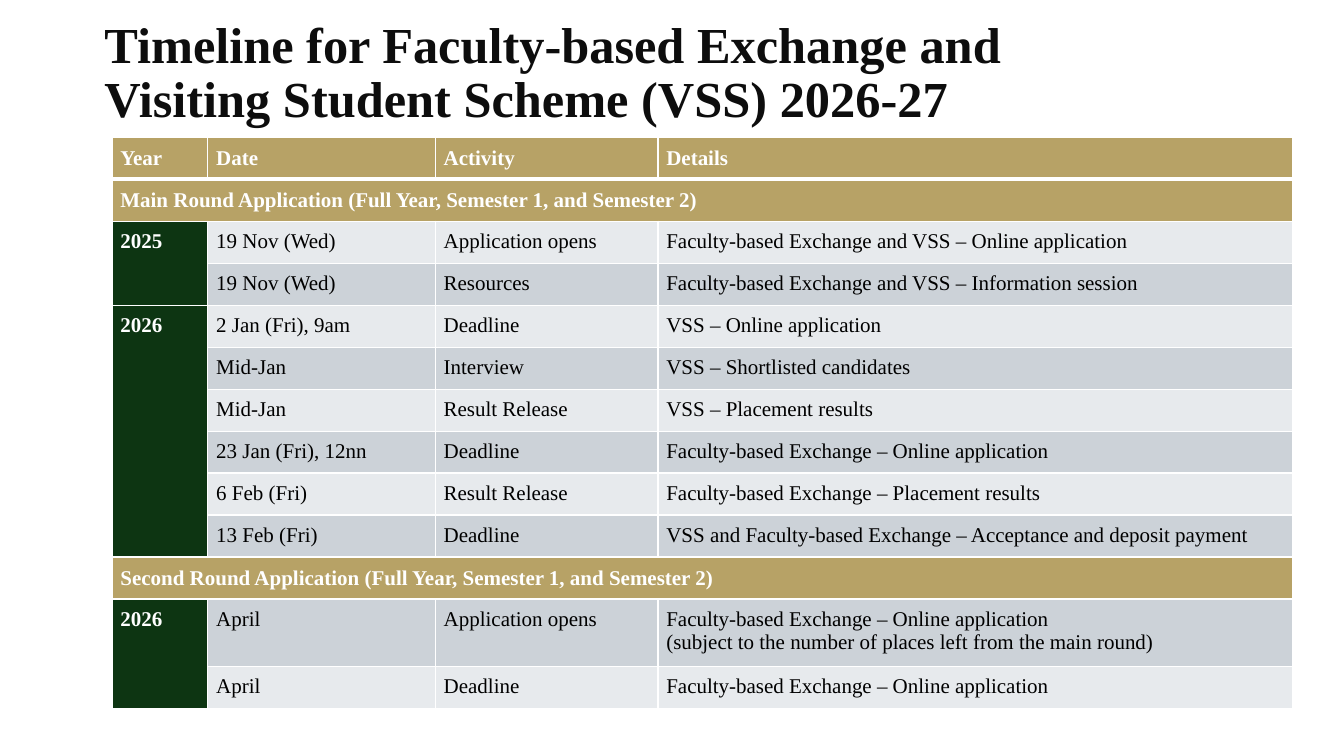
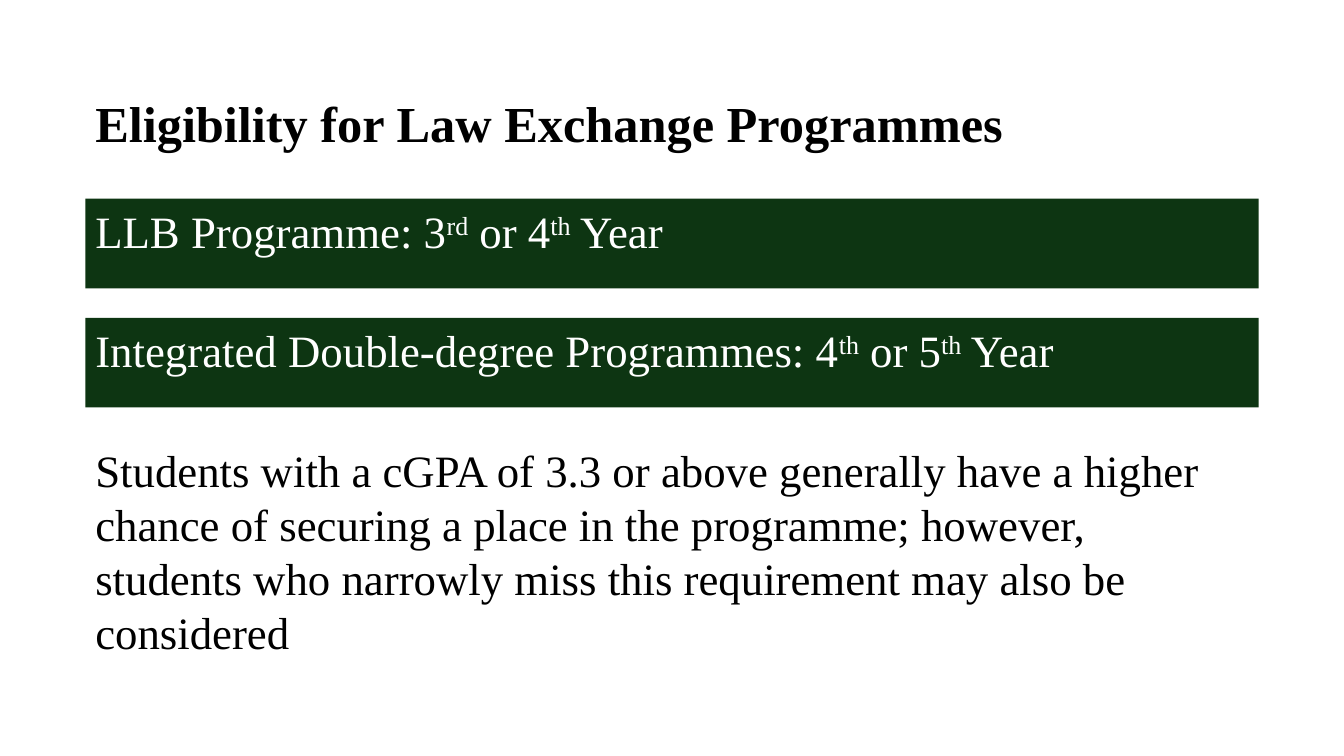
from dataclasses import dataclass

from lxml import etree
from pptx import Presentation
from pptx.dml.color import RGBColor
from pptx.enum import shapes, text
from pptx.oxml import ns
from pptx.util import Pt

PX = 6350


@dataclass(frozen=True)
class Theme:
    """Colours, font and type sizes shared by the slides."""
    font: str = "Times New Roman"
    white: str = "FFFFFF"
    black: str = "000000"
    ink: str = "0D0D0D"
    gold: str = "B7A266"
    green: str = "0D3512"
    light: str = "E7EAED"
    dark: str = "CCD2D8"
    title_size: int = 36
    title_leading: float = 39
    body_size: int = 32
    body_leading: float = 38.6
    table_size: int = 15


class Deck:
    """A presentation with its theme and the slide being built."""

    def __init__(self, width, height):
        """Open an empty deck of the given size."""
        self.theme = Theme()
        self.file = Presentation()
        self.file.slide_width = width * PX
        self.file.slide_height = height * PX
        self.page = None

    def add_page(self):
        """Start a new slide on the blank layout."""
        self.page = self.file.slides.add_slide(self.file.slide_layouts[6])

    def add_spans(self, para, spans, size, color, bold=False, leading=None):
        """Fill a paragraph with (words, raised) spans."""
        if leading:
            para.line_spacing = Pt(leading)
        for words, raised in spans:
            span = para.add_run()
            span.text = words
            span.font.name = self.theme.font
            span.font.size = Pt(size)
            span.font.bold = bold
            span.font.color.rgb = RGBColor.from_string(color)
            if raised:
                span._r.get_or_add_rPr().set("baseline", "30000")

    def add_box(self, area):
        """Add a wrapping text box and return its frame."""
        box = self.page.shapes.add_textbox(*(length * PX for length in area))
        box.text_frame.word_wrap = True
        return box.text_frame

    def add_title(self, words, area, color):
        """Add a bold slide title."""
        frame = self.add_box(area)
        frame.vertical_anchor = text.MSO_ANCHOR.MIDDLE
        self.add_spans(frame.paragraphs[0], [(words, False)], self.theme.title_size,
                       color, True, self.theme.title_leading)

    def add_body(self, words, area):
        """Add a paragraph of body text."""
        frame = self.add_box(area)
        self.add_spans(frame.paragraphs[0], [(words, False)], self.theme.body_size,
                       self.theme.black, leading=self.theme.body_leading)

    def add_bar(self, spans, area):
        """Add a green bar with white text."""
        bar = self.page.shapes.add_shape(
            shapes.MSO_SHAPE.RECTANGLE, *(length * PX for length in area))
        bar.shadow.inherit = False
        bar.fill.solid()
        bar.fill.fore_color.rgb = RGBColor.from_string(self.theme.green)
        bar.line.fill.background()
        frame = bar.text_frame
        frame.word_wrap = True
        frame.vertical_anchor = text.MSO_ANCHOR.TOP
        para = frame.paragraphs[0]
        para.alignment = text.PP_ALIGN.LEFT
        self.add_spans(para, spans, self.theme.body_size, self.theme.white,
                       leading=self.theme.body_leading)

    def style_cell(self, cell, fill, thick_side=None):
        """Give a cell its insets, white borders and fill."""
        cell.margin_left = cell.margin_right = 12 * PX
        cell.margin_top = cell.margin_bottom = 12 * PX
        props = cell._tc.get_or_add_tcPr()
        for side in ("lnL", "lnR", "lnT", "lnB"):
            line = etree.SubElement(props, ns.qn("a:" + side))
            line.set("w", str(Pt(3 if side == thick_side else 1)))
            solid = etree.SubElement(line, ns.qn("a:solidFill"))
            etree.SubElement(solid, ns.qn("a:srgbClr")).set("val", self.theme.white)
        cell.fill.solid()
        cell.fill.fore_color.rgb = RGBColor.from_string(fill)

    def fill_cell(self, cell, words, color, bold):
        """Put each line of words in its own paragraph."""
        for number, line in enumerate(words.splitlines()):
            frame = cell.text_frame
            para = frame.add_paragraph() if number else frame.paragraphs[0]
            self.add_spans(para, [(line, False)], self.theme.table_size, color, bold)

    def add_timeline(self, rows, left, top, widths, row_height, line_height):
        """Add a table; one-cell rows are bands, an empty year continues the last."""
        theme = self.theme
        heights = [row_height + line_height * row[-1].count("\n") for row in rows]
        table = self.page.shapes.add_table(
            len(rows), len(widths), left * PX, top * PX,
            sum(widths) * PX, sum(heights) * PX).table
        table.first_row = table.horz_banding = False
        for column, width in zip(table.columns, widths):
            column.width = width * PX
        year_row = 0
        for index, row in enumerate(rows):
            table.rows[index].height = heights[index] * PX
            heading = index == 0 or len(row) == 1
            stripe = theme.dark if index % 2 else theme.light
            thick_side = {0: "lnB", 1: "lnT"}.get(index)
            for number in range(len(widths)):
                year = number == 0 and not heading
                fill = theme.gold if heading else theme.green if year else stripe
                cell = table.cell(index, number)
                self.style_cell(cell, fill, thick_side)
                if heading:
                    cell.vertical_anchor = text.MSO_ANCHOR.MIDDLE
                if number < len(row):
                    strong = heading or year
                    color = theme.white if strong else theme.black
                    self.fill_cell(cell, row[number], color, strong)
            if len(row) == 1:
                table.cell(index, 0).merge(table.cell(index, len(widths) - 1))
            elif row[0]:
                year_row = index
            following = rows[index + 1] if index + 1 < len(rows) else ("end",)
            if following[0] and year_row < index and len(row) > 1:
                table.cell(year_row, 0).merge(table.cell(index, 0))


TIMELINE = [
    ("Year", "Date", "Activity", "Details"),
    ("Main Round Application (Full Year, Semester 1, and Semester 2)",),
    ("2025", "19 Nov (Wed)", "Application opens",
     "Faculty-based Exchange and VSS – Online application"),
    ("", "19 Nov (Wed)", "Resources",
     "Faculty-based Exchange and VSS – Information session"),
    ("2026", "2 Jan (Fri), 9am", "Deadline", "VSS – Online application"),
    ("", "Mid-Jan", "Interview", "VSS – Shortlisted candidates"),
    ("", "Mid-Jan", "Result Release", "VSS – Placement results"),
    ("", "23 Jan (Fri), 12nn", "Deadline",
     "Faculty-based Exchange – Online application"),
    ("", "6 Feb (Fri)", "Result Release",
     "Faculty-based Exchange – Placement results"),
    ("", "13 Feb (Fri)", "Deadline",
     "VSS and Faculty-based Exchange – Acceptance and deposit payment"),
    ("Second Round Application (Full Year, Semester 1, and Semester 2)",),
    ("2026", "April", "Application opens",
     "Faculty-based Exchange – Online application\n"
     "(subject to the number of places left from the main round)"),
    ("", "April", "Deadline", "Faculty-based Exchange – Online application"),
]

PROGRAMMES = [
    ("LLB Programme: 3", "rd", " or 4", "th", " Year"),
    ("Integrated Double-degree Programmes: 4", "th", " or 5", "th", " Year"),
]


def main():
    """Build and save both slides."""
    deck = Deck(1920, 1080)
    deck.add_page()
    deck.add_title("Timeline for Faculty-based Exchange and Visiting Student "
                   "Scheme (VSS) 2026-27", (135, 0, 1424, 209), deck.theme.ink)
    deck.add_timeline(TIMELINE, 160, 196, (137, 325, 318, 907), 58, 33)

    deck.add_page()
    deck.add_title("Eligibility for Law Exchange Programmes",
                   (122, 75, 1676, 209), deck.theme.black)
    for number, parts in enumerate(PROGRAMMES):
        spans = [(words, place % 2 == 1) for place, words in enumerate(parts)]
        deck.add_bar(spans, (122, 284 + 170 * number, 1676, 128))
    deck.add_body("Students with a cGPA of 3.3 or above generally have a higher "
                  "chance of securing a place in the programme; however, students "
                  "who narrowly miss this requirement may also be considered",
                  (122, 625, 1656, 350))
    deck.file.save("out.pptx")


if __name__ == "__main__":
    main()
